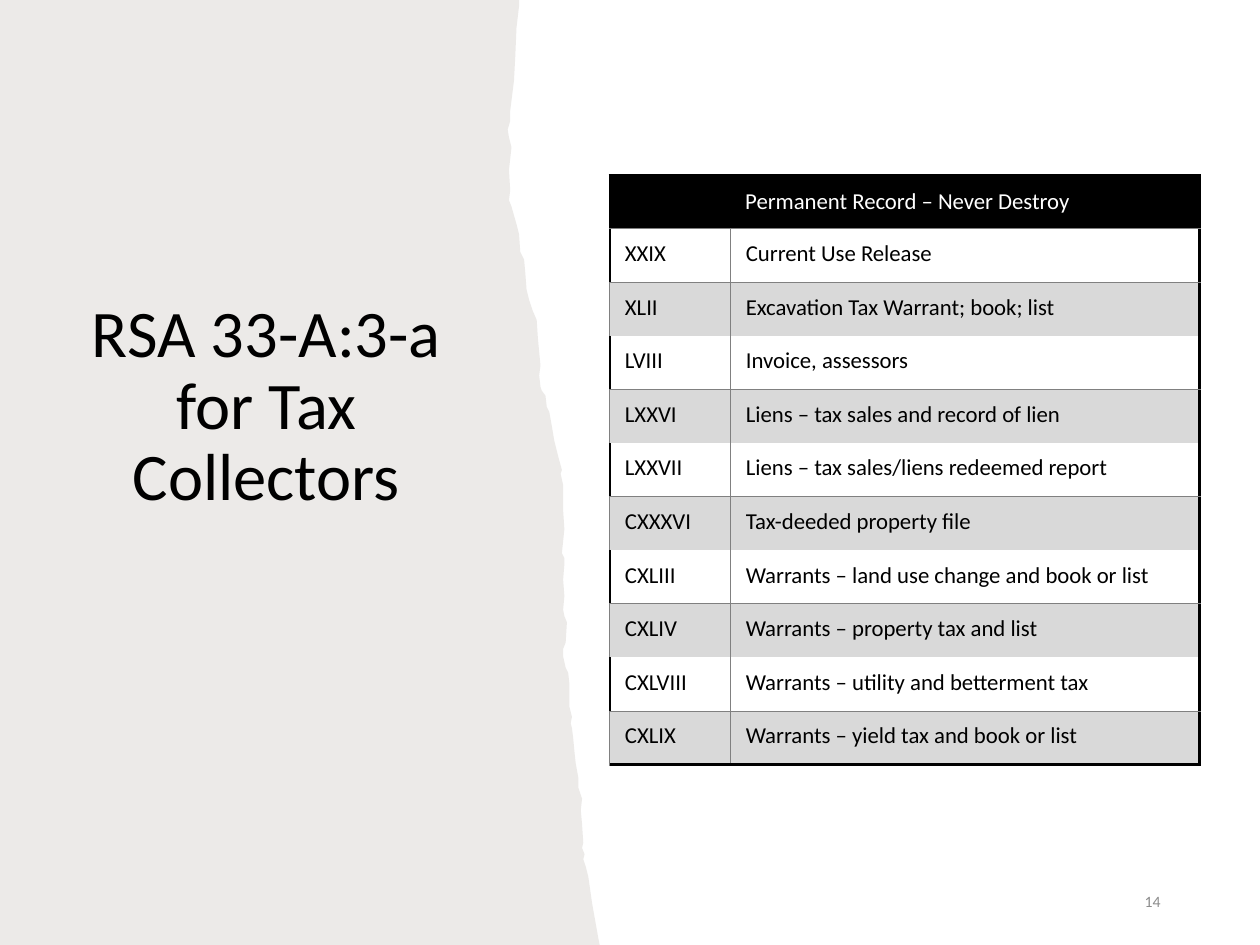
from dataclasses import dataclass

import pptx
import pptx.dml.color
import pptx.enum.text
import pptx.oxml
import pptx.oxml.ns
import pptx.util
from pptx.util import Inches

ALIGN = pptx.enum.text.PP_ALIGN
ANCHOR = pptx.enum.text.MSO_ANCHOR


@dataclass(frozen=True)
class Theme:
    font: str = "Calibri"
    ink: str = "000000"
    paper: str = "FFFFFF"
    panel: str = "82766A"
    panel_opacity: int = 15
    band: str = "D9D9D9"
    rule: str = "808080"
    muted: str = "8C8C8C"
    title_size: int = 38
    table_size: int = 13
    number_size: int = 9
    frame_width: float = 1.5
    rule_width: float = 0.5


# Torn right-hand edge of the panel, top to bottom, in hundredths of an inch.
TORN_EDGE = [
    (412, 0), (412, 5), (410, 22), (409, 45), (408, 64), (405, 88), (405, 96),
    (403, 103), (404, 109), (406, 117), (404, 135), (405, 151), (404, 159),
    (406, 164), (408, 171), (410, 178), (412, 186), (413, 200), (416, 206),
    (417, 217), (418, 230), (420, 238), (423, 247), (426, 254), (427, 269),
    (429, 290), (428, 298), (429, 307), (430, 310), (433, 314), (434, 323),
    (436, 327), (438, 338), (440, 350), (443, 362), (446, 373), (445, 376),
    (447, 385), (447, 405), (448, 420), (446, 439), (448, 443), (448, 448),
    (447, 460), (448, 473), (447, 484), (448, 489), (450, 494), (449, 510),
    (447, 515), (447, 521), (449, 530), (451, 534), (452, 543), (452, 561),
    (454, 569), (453, 574), (454, 578), (455, 586), (456, 597), (457, 606),
    (459, 617), (459, 625), (462, 634), (461, 643), (462, 654), (463, 669),
    (462, 673), (464, 678), (463, 682), (465, 688), (467, 696), (470, 717),
    (475, 745), (476, 750),
]

TABLE_HEADING = "Permanent Record – Never Destroy"
RECORDS = [
    ("XXIX", "Current Use Release"),
    ("XLII", "Excavation Tax Warrant; book; list"),
    ("LVIII", "Invoice, assessors"),
    ("LXXVI", "Liens – tax sales and record of lien"),
    ("LXXVII", "Liens – tax sales/liens redeemed report"),
    ("CXXXVI", "Tax-deeded property file"),
    ("CXLIII", "Warrants – land use change and book or list"),
    ("CXLIV", "Warrants – property tax and list"),
    ("CXLVIII", "Warrants – utility and betterment tax"),
    ("CXLIX", "Warrants – yield tax and book or list"),
]


def rgb(color):
    return pptx.dml.color.RGBColor.from_string(color)


class SlideBuilder:
    def __init__(self, slide, theme):
        self.slide = slide
        self.theme = theme

    def format_text(self, paragraph, size, color, align):
        paragraph.alignment = align
        for run in paragraph.runs:
            run.font.name = self.theme.font
            run.font.size = pptx.util.Pt(size)
            run.font.color.rgb = rgb(color)

    def panel(self, edge):
        builder = self.slide.shapes.build_freeform(0, 0, scale=Inches(0.01))
        builder.add_line_segments(edge + [(0, edge[-1][1])], close=True)
        shape = builder.convert_to_shape()
        shape.shadow.inherit = False
        shape.line.fill.background()
        shape.fill.solid()
        shape.fill.fore_color.rgb = rgb(self.theme.panel)
        color = shape._element.spPr.find(".//" + pptx.oxml.ns.qn("a:srgbClr"))
        alpha = pptx.oxml.parse_xml(
            f'<a:alpha {pptx.oxml.ns.nsdecls("a")} val="{self.theme.panel_opacity * 1000}"/>')
        color.append(alpha)

    def text(self, text, box, size, color, align, anchor):
        """Add a one-paragraph text box and return its paragraph."""
        shape = self.slide.shapes.add_textbox(*map(Inches, box))
        frame = shape.text_frame
        frame.word_wrap = True
        frame.vertical_anchor = anchor
        frame.text = text
        paragraph = frame.paragraphs[0]
        self.format_text(paragraph, size, color, align)
        return paragraph

    def borders(self, cell, **sides):
        """Draw sides L, R, T and B; each is a (color, width) pair or None."""
        properties = cell._tc.get_or_add_tcPr()
        for side in "LRTB":
            if sides[side]:
                color, points = sides[side]
                width = f' w="{pptx.util.Pt(points)}"'
                paint = f'<a:solidFill><a:srgbClr val="{color}"/></a:solidFill>'
            else:
                width, paint = "", "<a:noFill/>"
            properties.append(pptx.oxml.parse_xml(
                f'<a:ln{side} {pptx.oxml.ns.nsdecls("a")}{width}>{paint}</a:ln{side}>'))

    def fill_cell(self, cell, text, fill, color, align, anchor):
        cell.margin_left, cell.margin_right = Inches(0.12), Inches(0.08)
        cell.margin_top = cell.margin_bottom = Inches(0.09)
        cell.vertical_anchor = anchor
        if fill:
            cell.fill.solid()
            cell.fill.fore_color.rgb = rgb(fill)
        else:
            cell.fill.background()
        cell.text_frame.text = text
        self.format_text(cell.text_frame.paragraphs[0], self.theme.table_size, color, align)

    def record_table(self, heading, records, box, column_widths):
        theme = self.theme
        frame = (theme.ink, theme.frame_width)
        rule = (theme.rule, theme.rule_width)
        table = self.slide.shapes.add_table(
            len(records) + 1, len(column_widths), *map(Inches, box)).table
        table.first_row = table.horz_banding = False
        for column, width in zip(table.columns, column_widths):
            column.width = Inches(width)

        header = table.cell(0, 0)
        header.merge(table.cell(0, 1))
        for cell in table.rows[0].cells:
            self.borders(cell, L=frame, R=frame, T=frame, B=rule)
        self.fill_cell(header, heading, theme.ink, theme.paper, ALIGN.CENTER, ANCHOR.MIDDLE)

        for row, record in enumerate(records, start=1):
            banded = row % 2 == 0
            top = rule if banded or row == 1 else None
            bottom = None if banded else rule
            if row == len(records):
                bottom = frame
            outer_left = rule if banded else frame
            for column, (text, left, right) in enumerate(
                    zip(record, (outer_left, rule), (rule, frame))):
                cell = table.cell(row, column)
                self.borders(cell, L=left, R=right, T=top, B=bottom)
                self.fill_cell(cell, text, theme.band if banded else None,
                               theme.ink, ALIGN.LEFT, ANCHOR.TOP)


def main():
    presentation = pptx.Presentation()
    presentation.slide_width, presentation.slide_height = Inches(10), Inches(7.5)
    slide = presentation.slides.add_slide(presentation.slide_layouts[6])
    theme = Theme()
    builder = SlideBuilder(slide, theme)

    builder.panel(TORN_EDGE)
    title = builder.text("RSA 33-A:3-a for Tax Collectors", (0.63, 1.08, 2.97, 3.06),
                         theme.title_size, theme.ink, ALIGN.CENTER, ANCHOR.BOTTOM)
    title.line_spacing = 0.9
    number = builder.text("14", (7.06, 6.95, 2.25, 0.4),
                          theme.number_size, theme.muted, ALIGN.RIGHT, ANCHOR.MIDDLE)
    number.space_after = pptx.util.Pt(6)
    builder.record_table(TABLE_HEADING, RECORDS, (4.84, 1.39, 4.68, 4.68), (0.96, 3.72))

    presentation.save("out.pptx")


if __name__ == "__main__":
    main()
